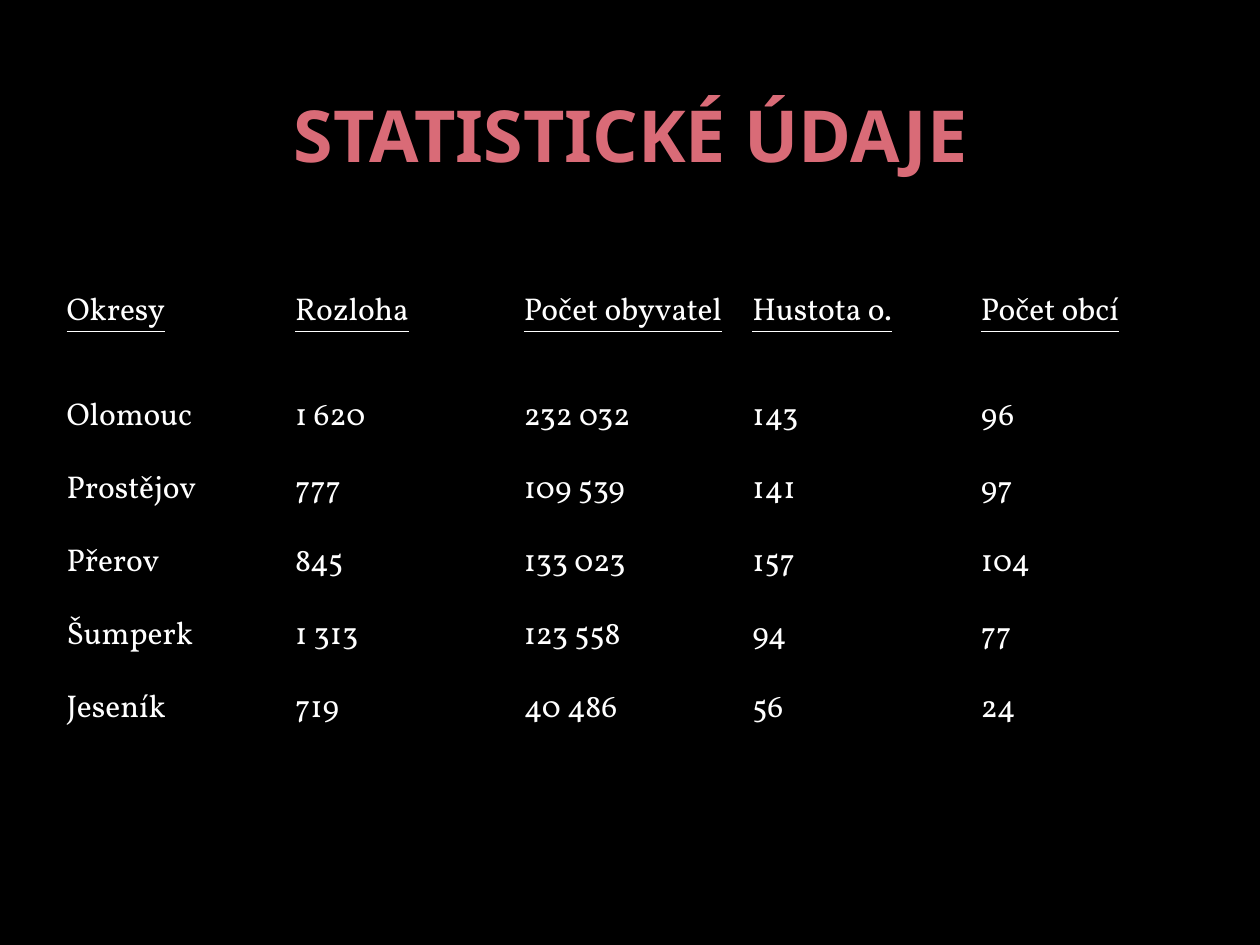
from dataclasses import dataclass

from pptx import Presentation
from pptx import util as u
from pptx.dml import color
from pptx.enum import text

PX = u.Inches(1) // 126
NO_STYLE_NO_GRID = "{2D5ABB26-0587-4C30-8999-92F81FD0307C}"


@dataclass(frozen=True)
class Theme:
    background: str = "000000"
    title_color: str = "D96B77"
    body_color: str = "FFFFFF"
    title_font: str = "Noto Sans"
    body_font: str = "Vollkorn"
    title_size: int = 41
    body_size: int = 18


def write(frame, content, *, font, size, hue, bold=False, underline=False,
          align=text.PP_ALIGN.LEFT):
    """Put one formatted line of text into a text frame."""
    para = frame.paragraphs[0]
    para.alignment = align
    span = para.add_run()
    span.text = content
    span.font.name = font
    span.font.size = u.Pt(size)
    span.font.bold = bold
    span.font.underline = underline
    span.font.color.rgb = color.RGBColor.from_string(hue)


class Page:
    """Holds the theme and the slide being built."""

    def __init__(self, deck, theme):
        self.theme = theme
        self.slide = deck.slides.add_slide(deck.slide_layouts[6])
        fill = self.slide.background.fill
        fill.solid()
        fill.fore_color.rgb = color.RGBColor.from_string(theme.background)

    def title(self, content, left, top, width, height):
        box = self.slide.shapes.add_textbox(
            left * PX, top * PX, width * PX, height * PX)
        frame = box.text_frame
        frame.word_wrap = True
        frame.vertical_anchor = text.MSO_ANCHOR.MIDDLE
        write(frame, content, font=self.theme.title_font,
              size=self.theme.title_size, hue=self.theme.title_color,
              bold=True, align=text.PP_ALIGN.CENTER)

    def table(self, rows, left, top, width, header_height, row_height):
        height = header_height + row_height * (len(rows) - 1)
        holder = self.slide.shapes.add_table(
            len(rows), len(rows[0]),
            left * PX, top * PX, width * PX, height * PX)
        grid = holder.table
        grid.first_row = grid.horz_banding = False
        # Plain style: neither grid lines nor bands
        grid._tbl.tblPr.find("{*}tableStyleId").text = NO_STYLE_NO_GRID

        for row_index, values in enumerate(rows):
            is_header = row_index == 0
            grid.rows[row_index].height = (
                header_height if is_header else row_height) * PX
            for column_index, value in enumerate(values):
                cell = grid.cell(row_index, column_index)
                cell.fill.background()
                cell.vertical_anchor = text.MSO_ANCHOR.MIDDLE
                write(cell.text_frame, value, font=self.theme.body_font,
                      size=self.theme.body_size, hue=self.theme.body_color,
                      underline=is_header)


DISTRICTS = [
    ("Okresy", "Rozloha", "Počet obyvatel", "Hustota o.", "Počet obcí"),
    ("Olomouc", "1 620", "232 032", "143", "96"),
    ("Prostějov", "777", "109 539", "141", "97"),
    ("Přerov", "845", "133 023", "157", "104"),
    ("Šumperk", "1 313", "123 558", "94", "77"),
    ("Jeseník", "719", "40 486", "56", "24"),
]


def main():
    deck = Presentation()
    deck.slide_width, deck.slide_height = 1260 * PX, 945 * PX
    page = Page(deck, Theme())

    # Heading
    page.title("STATISTICKÉ ÚDAJE", 64, 55, 1134, 158)

    # District figures
    page.table(DISTRICTS, 54, 244, 1143, header_height=137, row_height=73)

    deck.save("out.pptx")


if __name__ == "__main__":
    main()
